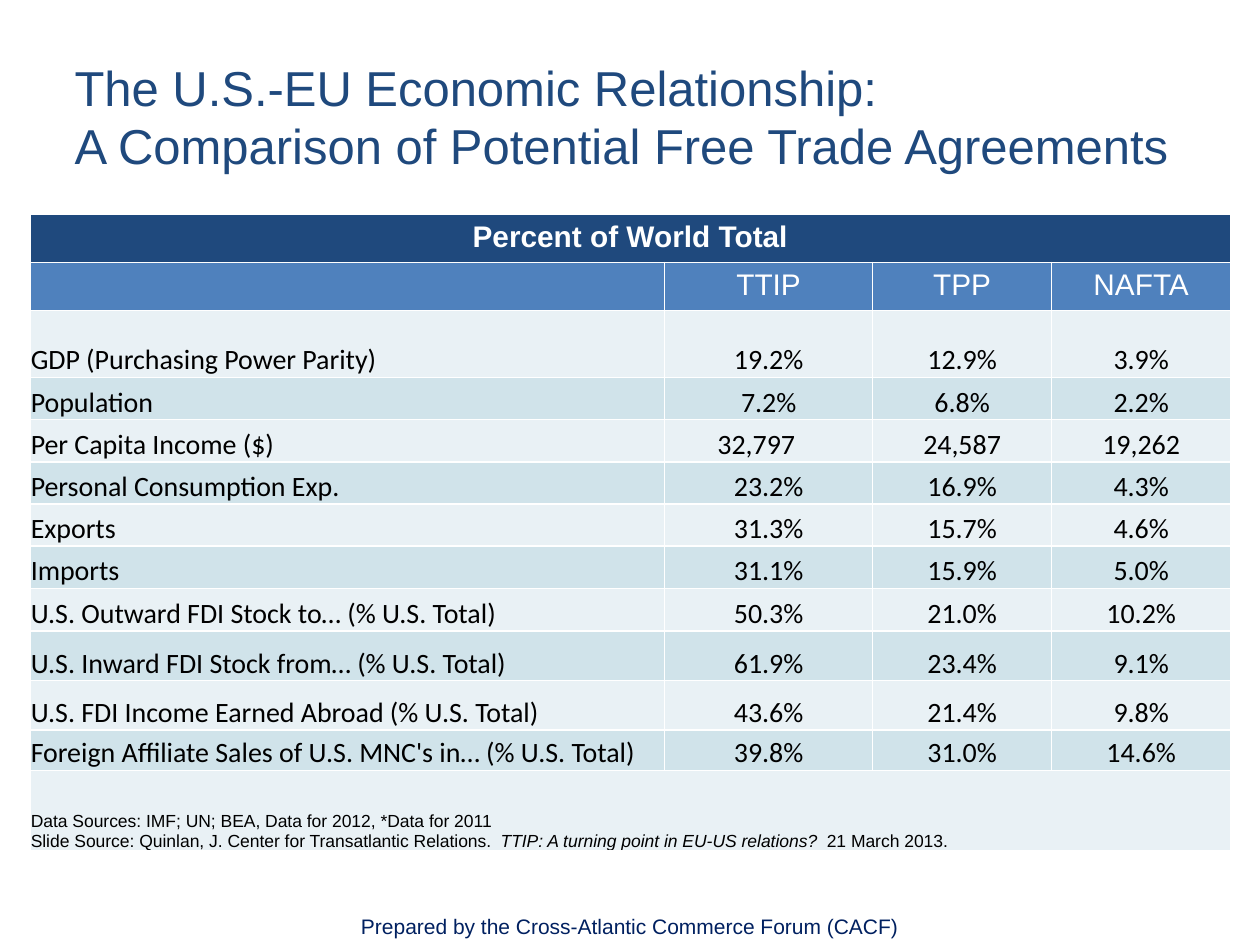
from pptx import Presentation
from pptx.dml.color import RGBColor
from pptx.enum.text import MSO_ANCHOR, MSO_AUTO_SIZE, PP_ALIGN
from pptx.util import Cm, Pt

LEFT, MID = PP_ALIGN.LEFT, PP_ALIGN.CENTER
TOP, LOW = MSO_ANCHOR.TOP, MSO_ANCHOR.BOTTOM
FIXED = MSO_AUTO_SIZE.NONE
NAVY = RGBColor(0x1F, 0x49, 0x7D)
BLUE = RGBColor(0x4F, 0x81, 0xBD)
PALE = RGBColor(0xE9, 0xF1, 0xF5)
TINT = RGBColor(0xD0, 0xE3, 0xEA)
INK = RGBColor(0x00, 0x20, 0x60)
WHITE = RGBColor(0xFF, 0xFF, 0xFF)
BLACK = RGBColor(0x00, 0x00, 0x00)

TITLE = ["The U.S.-EU Economic Relationship:",
         "A Comparison of Potential Free Trade Agreements"]
BANNER = "Percent of World Total"
HEADS = ["", "TTIP", "TPP", "NAFTA"]
ROWS = [
    ("GDP (Purchasing Power Parity)", "19.2%", "12.9%", "3.9%"),
    ("Population", "7.2%", "6.8%", "2.2%"),
    ("Per Capita Income ($)", "32,797", "24,587", "19,262"),
    ("Personal Consumption Exp.", "23.2%", "16.9%", "4.3%"),
    ("Exports", "31.3%", "15.7%", "4.6%"),
    ("Imports", "31.1%", "15.9%", "5.0%"),
    ("U.S. Outward FDI Stock to… (% U.S. Total)", "50.3%", "21.0%", "10.2%"),
    ("U.S. Inward FDI Stock from… (% U.S. Total)", "61.9%", "23.4%", "9.1%"),
    ("U.S. FDI Income Earned Abroad (% U.S. Total)", "43.6%", "21.4%", "9.8%"),
    ("Foreign Affiliate Sales of U.S. MNC's in… (% U.S. Total)",
     "39.8%", "31.0%", "14.6%"),
]
NOTES = [
    ["Data Sources: IMF; UN; BEA, Data for 2012, *Data for 2011"],
    ["Slide Source: Quinlan, J. Center for Transatlantic Relations.  ",
     "TTIP: A turning point in EU-US relations?  ",
     "21 March 2013."],
]
CREDIT = "Prepared by the Cross-Atlantic Commerce Forum (CACF)"
WIDTHS = [12.8, 4.19, 3.61, 3.61]
HEIGHTS = [0.97, 0.97, 1.35] + [0.85] * 5 + [0.86, 1, 1, 0.81, 1.63]


def write(para, text, size, color, font="Arial", bold=False, slant=False, align=LEFT):
    para.alignment = align
    run = para.add_run()
    run.text = text
    face = run.font
    face.name, face.size, face.bold, face.italic = font, Pt(size), bold, slant
    face.color.rgb = color


def paint(cell, color, tight=False):
    cell.fill.solid()
    cell.fill.fore_color.rgb = color
    cell.vertical_anchor = LOW if tight else TOP
    if tight:
        cell.margin_left = cell.margin_right = cell.margin_top = Cm(0.02)
        cell.margin_bottom = 0


def add_title(slide):
    title = slide.shapes.title
    title.left, title.top = Cm(1.25), Cm(0.91)
    title.width, title.height = Cm(22.86), Cm(2.74)
    frame = title.text_frame
    frame.auto_size, frame.vertical_anchor = FIXED, LOW
    para = frame.paragraphs[0]
    write(para, TITLE[0], 28, NAVY)
    para.add_line_break()
    write(para, TITLE[1], 28, NAVY)


def add_grid(slide):
    grid = slide.shapes.add_table(
        len(HEIGHTS), len(WIDTHS), Cm(0.6), Cm(4.32),
        Cm(sum(WIDTHS)), Cm(sum(HEIGHTS))).table
    for col, width in zip(grid.columns, WIDTHS):
        col.width = Cm(width)
    for row, height in zip(grid.rows, HEIGHTS):
        row.height = Cm(height)

    last = len(HEIGHTS) - 1
    for num in (0, last):
        grid.cell(num, 0).merge(grid.cell(num, len(WIDTHS) - 1))
    top = grid.cell(0, 0)
    paint(top, NAVY)
    write(top.text_frame.paragraphs[0], BANNER, 17, WHITE, bold=True, align=MID)

    for col, head in enumerate(HEADS):
        cell = grid.cell(1, col)
        paint(cell, BLUE)
        write(cell.text_frame.paragraphs[0], head, 17, WHITE, align=MID)

    for num, row in enumerate(ROWS):
        for col, text in enumerate(row):
            cell = grid.cell(num + 2, col)
            paint(cell, TINT if num % 2 else PALE, tight=True)
            write(cell.text_frame.paragraphs[0], text, 16, BLACK,
                  font="Calibri", align=MID if col else LEFT)
    grid.cell(4, 1).margin_right = Cm(0.52)

    foot = grid.cell(last, 0)
    paint(foot, PALE, tight=True)
    frame = foot.text_frame
    for num, parts in enumerate(NOTES):
        para = frame.add_paragraph() if num else frame.paragraphs[0]
        for spot, part in enumerate(parts):
            write(para, part, 10, BLACK, slant=spot == 1)


def add_credit(slide):
    box = slide.shapes.add_textbox(Cm(1.3), Cm(18.29), Cm(22.8), Cm(0.76))
    box.text_frame.word_wrap = True
    write(box.text_frame.paragraphs[0], CREDIT, 12, INK, align=MID)


def main():
    deck = Presentation()
    deck.slide_width, deck.slide_height = Cm(25.4), Cm(19.05)
    slide = deck.slides.add_slide(deck.slide_layouts[5])
    add_title(slide)
    add_grid(slide)
    add_credit(slide)
    deck.save("out.pptx")


if __name__ == "__main__":
    main()
